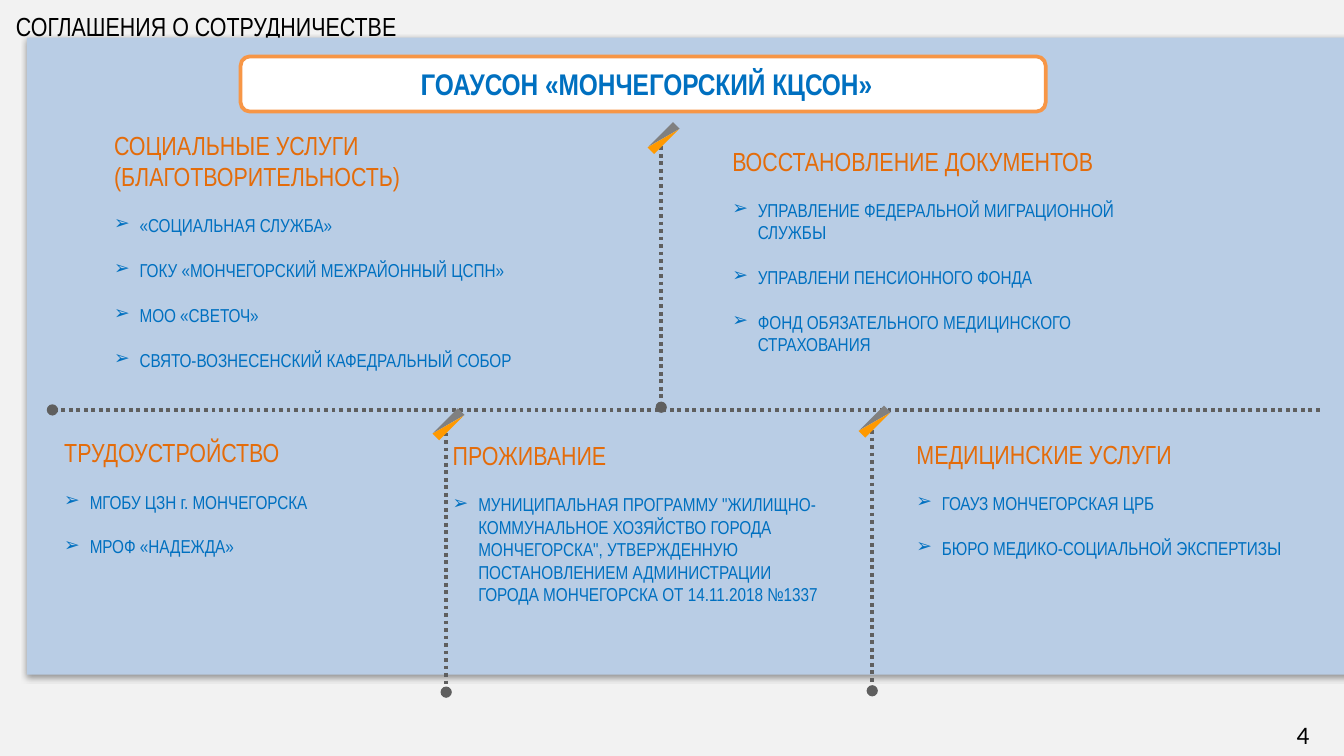
"""Build the slide on cooperation agreements of the social service centre."""
from dataclasses import dataclass

from lxml import etree
from pptx import Presentation
from pptx.dml.color import RGBColor
from pptx.enum import dml, shapes, text
from pptx.oxml import parse_xml
from pptx.oxml.ns import nsdecls, qn
from pptx.util import Inches, Pt


@dataclass(frozen=True)
class Theme:
    background: str = "F2F2F2"
    panel: str = "B9CDE5"
    white: str = "FFFFFF"
    black: str = "000000"
    banner_edge: str = "F79646"
    heading: str = "E46C0A"
    body: str = "0070C0"
    rule: str = "5F5F5F"
    tip_dark: str = "808080"
    tip_bright: str = "FF9900"
    face: str = "Arial Narrow"
    number_face: str = "Calibri"
    banner_size: float = 16
    heading_size: float = 14
    number_size: float = 13.5
    body_size: float = 10
    gap: float = 12
    line_width: float = 2


@dataclass(frozen=True)
class Box:
    left: float
    top: float
    width: float
    height: float

    def lengths(self) -> list:
        return [Inches(side) for side in (self.left, self.top, self.width, self.height)]


@dataclass(frozen=True)
class Partners:
    box: Box
    heading: str
    names: tuple[str, ...]


@dataclass(frozen=True)
class Divider:
    x: float
    top: float
    bottom: float


THEME = Theme()
PANEL = Box(0.2, 0.28, 10.02, 4.74)
BANNER = Box(1.79, 0.42, 5.99, 0.41)
DIVIDERS = (Divider(4.92, 1.09, 3.03), Divider(3.32, 3.22, 5.15), Divider(6.49, 3.2, 5.14))
SECTIONS = (
    Partners(Box(6.72, 3.21, 3.48, 1.01), "МЕДИЦИНСКИЕ УСЛУГИ",
             ("ГОАУЗ МОНЧЕГОРСКАЯ ЦРБ", "БЮРО МЕДИКО-СОЦИАЛЬНОЙ ЭКСПЕРТИЗЫ")),
    Partners(Box(5.35, 1.03, 3.48, 1.85), "ВОССТАНОВЛЕНИЕ ДОКУМЕНТОВ",
             ("УПРАВЛЕНИЕ ФЕДЕРАЛЬНОЙ МИГРАЦИОННОЙ СЛУЖБЫ",
              "УПРАВЛЕНИ ПЕНСИОННОГО ФОНДА",
              "ФОНД ОБЯЗАТЕЛЬНОГО МЕДИЦИНСКОГО СТРАХОВАНИЯ")),
    Partners(Box(0.38, 3.2, 2.57, 1.01), "ТРУДОУСТРОЙСТВО",
             ("МГОБУ ЦЗН г. МОНЧЕГОРСКА", "МРОФ «НАДЕЖДА»")),
    Partners(Box(3.27, 3.22, 2.98, 1.68), "ПРОЖИВАНИЕ",
             ('МУНИЦИПАЛЬНАЯ ПРОГРАММУ "ЖИЛИЩНО-КОММУНАЛЬНОЕ ХОЗЯЙСТВО ГОРОДА '
              'МОНЧЕГОРСКА", УТВЕРЖДЕННУЮ ПОСТАНОВЛЕНИЕМ АДМИНИСТРАЦИИ '
              'ГОРОДА МОНЧЕГОРСКА ОТ 14.11.2018 №1337',)),
    Partners(Box(0.75, 0.91, 3.48, 2.09), "СОЦИАЛЬНЫЕ УСЛУГИ (БЛАГОТВОРИТЕЛЬНОСТЬ)",
             ("«СОЦИАЛЬНАЯ СЛУЖБА»", "ГОКУ «МОНЧЕГОРСКИЙ МЕЖРАЙОННЫЙ ЦСПН»",
              "МОО «СВЕТОЧ»", "СВЯТО-ВОЗНЕСЕНСКИЙ КАФЕДРАЛЬНЫЙ СОБОР")),
)


def write(paragraph, wording: str, size: float, color: str,
          face: str = THEME.face, bold: bool = False) -> None:
    paragraph.text = wording
    font = paragraph.font
    font.name, font.size, font.bold = face, Pt(size), bold
    font.color.rgb = RGBColor.from_string(color)


def add_text(slide, box: Box):
    frame = slide.shapes.add_textbox(*box.lengths()).text_frame
    frame.word_wrap = True
    return frame


def add_filled(parent, kind, box: Box, color: str):
    filled = parent.shapes.add_shape(kind, *box.lengths())
    filled.shadow.inherit = False
    filled.fill.solid()
    filled.fill.fore_color.rgb = RGBColor.from_string(color)
    filled.line.fill.background()
    return filled


def add_panel(slide) -> None:
    panel = add_filled(slide, shapes.MSO_SHAPE.RECTANGLE, PANEL, THEME.panel)
    effects = panel._element.spPr.find(qn("a:effectLst"))
    effects.append(parse_xml(
        f'<a:outerShdw {nsdecls("a")} blurRad="{Pt(3.1)}" dist="{Pt(1.6)}" dir="5400000" '
        f'rotWithShape="0"><a:srgbClr val="{THEME.black}"><a:alpha val="38000"/>'
        '</a:srgbClr></a:outerShdw>'))


def add_banner(slide) -> None:
    banner = add_filled(slide, shapes.MSO_SHAPE.ROUNDED_RECTANGLE, BANNER, THEME.white)
    banner.line.color.rgb = RGBColor.from_string(THEME.banner_edge)
    banner.line.width = Pt(THEME.line_width)
    frame = banner.text_frame
    frame.margin_left = Inches(0.15)
    frame.vertical_anchor = text.MSO_ANCHOR.MIDDLE
    title = frame.paragraphs[0]
    title.alignment = text.PP_ALIGN.CENTER
    write(title, "ГОАУСОН «МОНЧЕГОРСКИЙ КЦСОН»", THEME.banner_size, THEME.body, bold=True)


def add_dotted(parent, x1: float, y1: float, x2: float, y2: float) -> None:
    dotted = parent.shapes.add_connector(
        shapes.MSO_CONNECTOR.STRAIGHT, Inches(x1), Inches(y1), Inches(x2), Inches(y2))
    dotted.line.color.rgb = RGBColor.from_string(THEME.rule)
    dotted.line.width = Pt(THEME.line_width)
    dotted.line.dash_style = dml.MSO_LINE.ROUND_DOT
    properties = dotted._element.spPr
    etree.SubElement(properties.find(qn("a:ln")), qn("a:tailEnd"), type="oval")
    etree.SubElement(properties, qn("a:effectLst"))


def add_divider(slide, divider: Divider) -> None:
    group = slide.shapes.add_group_shape()
    add_dotted(group, divider.x, divider.top, divider.x, divider.bottom)
    triangle = shapes.MSO_SHAPE.RIGHT_TRIANGLE
    dark = add_filled(group, triangle,
                      Box(divider.x - 0.11, divider.top - 0.1, 0.26, 0.07), THEME.tip_dark)
    dark.rotation = 135
    bright = add_filled(group, triangle,
                        Box(divider.x - 0.02, divider.top - 0.19, 0.07, 0.26), THEME.tip_bright)
    bright.rotation = 45
    bright._element.spPr.xfrm.set("flipH", "1")


def add_partners(slide, section: Partners) -> None:
    frame = add_text(slide, section.box)
    write(frame.paragraphs[0], section.heading, THEME.heading_size, THEME.heading)
    for name in section.names:
        item = frame.add_paragraph()
        properties = item._p.get_or_add_pPr()
        properties.set("marL", str(Inches(0.19)))
        properties.set("indent", str(-Inches(0.19)))
        etree.SubElement(properties, qn("a:buFont"), typeface=THEME.face)
        etree.SubElement(properties, qn("a:buChar"), char="➢")
        item.space_before = Pt(THEME.gap)
        write(item, name, THEME.body_size, THEME.body)


def main() -> None:
    deck = Presentation()
    deck.slide_width = Inches(10)
    deck.slide_height = deck.slide_width * 9 // 16
    slide = deck.slides.add_slide(deck.slide_layouts[6])
    slide.background.fill.solid()
    slide.background.fill.fore_color.rgb = RGBColor.from_string(THEME.background)

    topic = add_text(slide, Box(0.02, 0.03, 10.26, 0.34))
    write(topic.paragraphs[0], "СОГЛАШЕНИЯ О СОТРУДНИЧЕСТВЕ", THEME.heading_size, THEME.black)
    add_panel(slide)
    page = add_text(slide, Box(9.55, 5.3, 0.28, 0.33))
    write(page.paragraphs[0], "4", THEME.number_size, THEME.black, THEME.number_face)
    add_banner(slide)
    add_dotted(slide, 9.82, 3.05, 0.39, 3.05)
    for divider in DIVIDERS:
        add_divider(slide, divider)
    for section in SECTIONS:
        add_partners(slide, section)
    deck.save("out.pptx")


if __name__ == "__main__":
    main()
